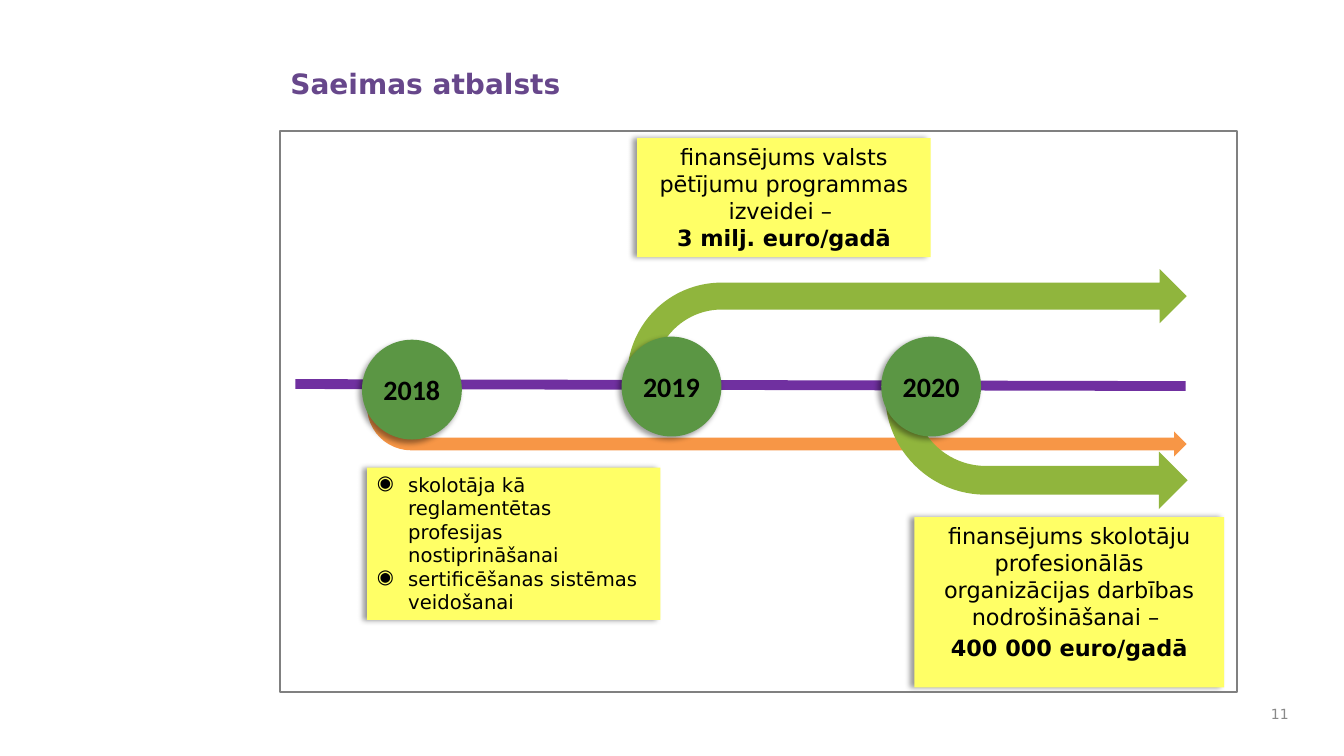
from lxml import etree
from pptx import Presentation
from pptx.dml.color import RGBColor
from pptx.enum import shapes, text
from pptx.oxml.ns import qn
from pptx.util import Inches, Pt

BLACK = RGBColor(0x00, 0x00, 0x00)
GRAY = RGBColor(0x80, 0x80, 0x80)
NUMBER_GRAY = RGBColor(0x89, 0x89, 0x89)
TITLE_PURPLE = RGBColor(0x67, 0x47, 0x8B)
LINE_PURPLE = RGBColor(0x70, 0x30, 0xA0)
YELLOW = RGBColor(0xFF, 0xFF, 0x66)
ORANGE = RGBColor(0xF7, 0x96, 0x46)
LIME = RGBColor(0x90, 0xB5, 0x3D)
GREEN = RGBColor(0x5B, 0x96, 0x44)

SHAPE = shapes.MSO_SHAPE
ALIGN = text.PP_ALIGN
ANCHOR = text.MSO_ANCHOR


def place(sp, x, y, w, h):
    sp.left, sp.top, sp.width, sp.height = (Inches(v) for v in (x, y, w, h))


def add_shape(s, kind, x, y, w, h, fill=None):
    sp = s.shapes.add_shape(kind, *(Inches(v) for v in (x, y, w, h)))
    sp.shadow.inherit = False
    sp.line.fill.background()
    paint(sp, fill)
    return sp


def paint(sp, fill):
    if fill is None:
        sp.fill.background()
    else:
        sp.fill.solid()
        sp.fill.fore_color.rgb = fill


def add_shadow(sp, angle):
    sp.shadow.inherit = False
    effects = sp._element.spPr.find(qn("a:effectLst"))
    shadow = etree.SubElement(effects, qn("a:outerShdw"), blurRad=str(Pt(4)), dist=str(Pt(3)),
                              dir=str(angle * 60000), algn="t", rotWithShape="0")
    color = etree.SubElement(shadow, qn("a:srgbClr"), val="000000")
    etree.SubElement(color, qn("a:alpha"), val="40000")


def set_bullet(p, char, indent):
    pPr = p._p.get_or_add_pPr()
    pPr.set("marL", str(Inches(indent)))
    pPr.set("indent", str(-Inches(indent)))
    if char:
        etree.SubElement(pPr, qn("a:buChar"), char=char)
    else:
        etree.SubElement(pPr, qn("a:buNone"))


def write(sp, lines, size, color=BLACK, font="DejaVu Sans", align=ALIGN.LEFT, anchor=ANCHOR.TOP,
          bold=(), bullet=None, indent=0, gap=0, inset=(0.1, 0.05)):
    """Write one paragraph per line; bold holds the indexes of bold lines."""
    tf = sp.text_frame
    tf.word_wrap = True
    tf.auto_size = text.MSO_AUTO_SIZE.NONE
    tf.vertical_anchor = anchor
    tf.margin_left = tf.margin_right = Inches(inset[0])
    tf.margin_top = tf.margin_bottom = Inches(inset[1])
    for i, line in enumerate(lines):
        p = tf.paragraphs[0] if i == 0 else tf.add_paragraph()
        p.alignment = align
        p.space_before = Pt(gap if i else 0)
        set_bullet(p, bullet, indent)
        r = p.add_run()
        r.text = line
        r.font.name, r.font.size, r.font.bold = font, Pt(size), i in bold
        r.font.color.rgb = color


def note(s, box, lines, sp=None, **fmt):
    """Yellow note with a shadow to its left; fills a placeholder if one is given."""
    if sp is None:
        sp = add_shape(s, SHAPE.RECTANGLE, *box)
    else:
        place(sp, *box)
    paint(sp, YELLOW)
    add_shadow(sp, 180)
    write(sp, lines, **fmt)


def bent_arrow(s, box, color, downward=False):
    sp = add_shape(s, SHAPE.BENT_ARROW, *box, fill=color)
    for i, value in enumerate((0.25, 0.25, 0.25, 0.875)):
        sp.adjustments[i] = value
    if downward:
        sp.rotation = 180
        sp._element.spPr.find(qn("a:xfrm")).set("flipH", "1")


def year_circle(s, x, y, year):
    sp = add_shape(s, SHAPE.OVAL, x, y, 0.99, 0.99, GREEN)
    add_shadow(sp, 135)
    write(sp, [year], 20, font="Calibri", align=ALIGN.CENTER, anchor=ANCHOR.MIDDLE,
          bold=(0,), inset=(0, 0))


def header(s, box):
    place(s.shapes.title, *box)
    write(s.shapes.title, ["Saeimas atbalsts"], 20, color=TITLE_PURPLE, bold=(0,))


def timeline(s, x, y, w, h):
    # Frame
    frame = add_shape(s, SHAPE.RECTANGLE, x, y, w, h)
    frame.line.color.rgb, frame.line.width = GRAY, Pt(1.5)

    # Arrows that start under the circles
    bent_arrow(s, (x + 0.86, y + 2.73, 8.13, 0.5), ORANGE, downward=True)
    bent_arrow(s, (x + 6, y + 2.61, 3, 1.14), LIME, downward=True)
    bent_arrow(s, (x + 3.44, y + 1.37, 5.55, 1.07), LIME)

    # Time axis
    axis = s.shapes.add_connector(shapes.MSO_CONNECTOR.STRAIGHT, Inches(x + 0.15),
                                  Inches(y + 2.51), Inches(x + 8.98), Inches(y + 2.53))
    axis.line.color.rgb, axis.line.width = LINE_PURPLE, Pt(7)
    etree.SubElement(axis._element.spPr, qn("a:effectLst"))

    # Years
    for i, (year, dy) in enumerate((("2018", 2.07), ("2019", 2.04), ("2020", 2.04))):
        year_circle(s, x + 0.81 + i * 2.575, y + dy, year)

    # Notes
    note(s, (x + 0.86, y + 3.34, 2.91, 1.51),
         ["skolotāja kā reglamentētas profesijas nostiprināšanai",
          "sertificēšanas sistēmas veidošanai"], size=14, bullet="◉", indent=0.31)
    note(s, (x + 3.54, y + 0.07, 2.91, 1.18),
         ["finansējums valsts pētījumu programmas izveidei – ", "3 milj. euro/gadā"],
         size=16, align=ALIGN.CENTER, bold=(1,))
    note(s, (x + 6.29, y + 3.83, 3.07, 1.69),
         ["finansējums skolotāju profesionālās organizācijas darbības nodrošināšanai – ",
          "400 000 euro/gadā"],
         sp=s.placeholders[1], size=16, align=ALIGN.CENTER, bold=(1,), gap=3.2)


def page_number(s, box):
    sp = s.shapes.add_textbox(*(Inches(v) for v in box))
    write(sp, ["11"], 10, color=NUMBER_GRAY, align=ALIGN.RIGHT, anchor=ANCHOR.MIDDLE)


def main():
    prs = Presentation()
    prs.slide_width, prs.slide_height = Inches(13.33), Inches(7.5)
    s = prs.slides.add_slide(prs.slide_layouts[1])
    header(s, (2.78, 0.61, 3.89, 0.58))
    timeline(s, 2.78, 1.3, 9.49, 5.57)
    page_number(s, (12.44, 6.92, 0.44, 0.33))
    prs.save("out.pptx")


if __name__ == "__main__":
    main()
